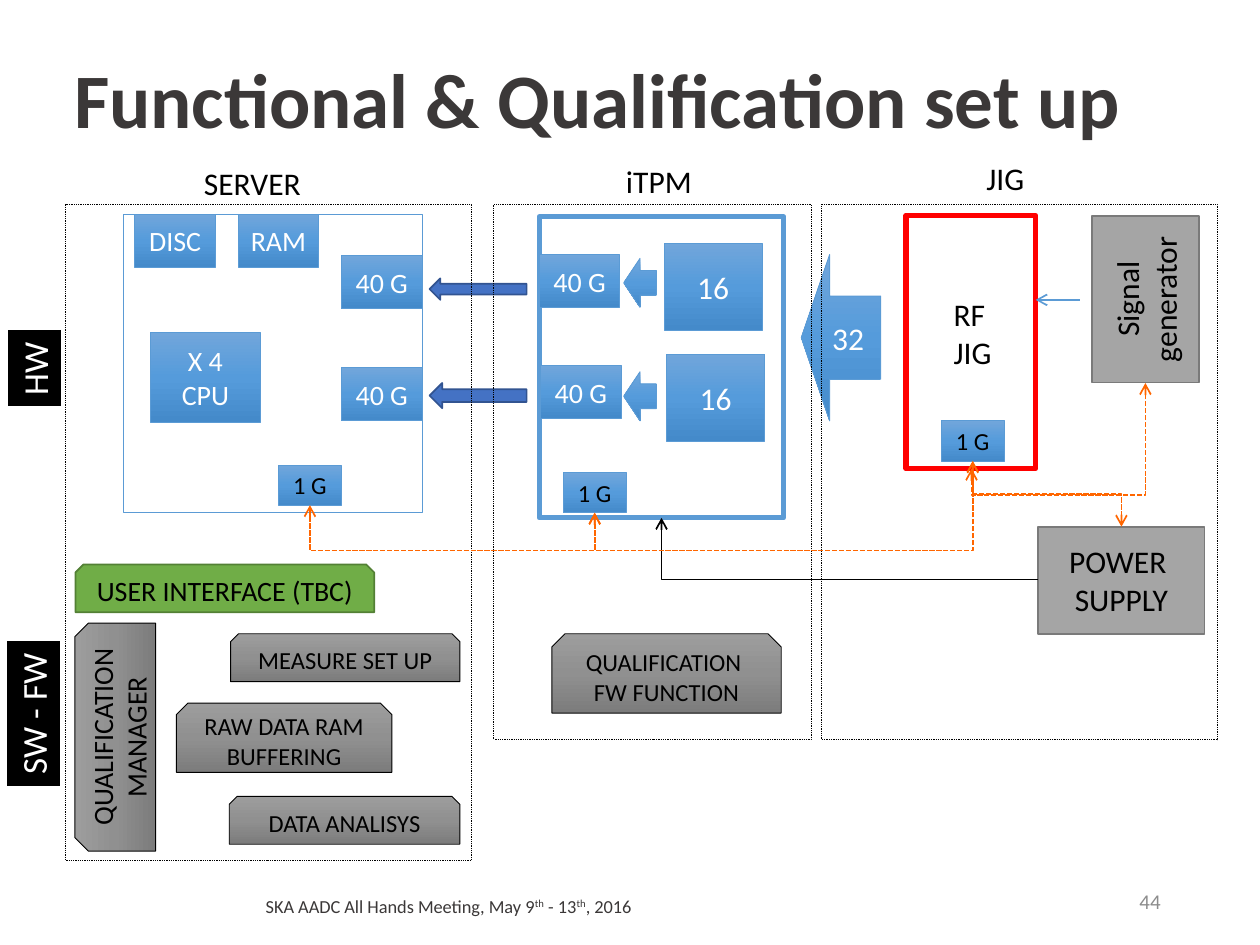
"""Build the functional and qualification set-up block diagram slide."""
from copy import deepcopy

from pptx import Presentation
from pptx.dml.color import RGBColor
from pptx.enum.dml import MSO_LINE
from pptx.enum.shapes import MSO_CONNECTOR as CONN, MSO_SHAPE as SHAPE
from pptx.enum.text import MSO_ANCHOR as ANCHOR, MSO_AUTO_SIZE as AUTO, PP_ALIGN as ALIGN
from pptx.oxml.ns import qn
from pptx.util import Inches, Pt

BLACK, WHITE, BLUE, ORANGE, DARK = "000000", "FFFFFF", "5B9BD5", "FF6600", "3B3838"
BLUES = ("71A6DB", "559BDB", "448ACA")
GRAYS = ("9D9D9D", "909090", "7C7C7C")
BLOCK = (0.64, 0.42)
PORT = (0.5, 0.32)
CHIP = (0.78, 0.69)

FOOTER = [("SKA AADC All Hands Meeting, May 9", 0), ("th", 30000), (" - 13", 0),
          ("th", 30000), (", 2016", 0)]
LABELS = [
    (1.52, 1.25, 0.99, 0.4, ["SERVER"]),
    (4.87, 1.24, 0.73, 0.4, ["iTPM"]),
    (7.73, 1.21, 0.51, 0.4, ["JIG"]),
    (7.47, 2.29, 0.51, 0.71, ["RF", "JIG"]),
]
FRAMES = [
    (4.28, 1.72, 1.94, 2.39, None, BLUE, 3),
    (7.19, 1.71, 1.03, 2.01, None, "FF0000", 3),
    (0.98, 1.7, 2.37, 2.37, WHITE, BLUE, 0.5),
]
ZONES = [(0.52, 3.22, 5.21), (3.92, 2.52, 4.25), (6.52, 3.14, 4.25)]
BLOCKS = [
    (5.27, 1.93, CHIP, ["16"], 18, WHITE),
    (4.28, 2.02, BLOCK, ["40 G"], 16, WHITE),
    (5.29, 2.81, CHIP, ["16"], 18, WHITE),
    (4.29, 2.9, BLOCK, ["40 G"], 16, WHITE),
    (2.71, 2.03, BLOCK, ["40 G"], 16, WHITE),
    (2.71, 2.92, BLOCK, ["40 G"], 16, WHITE),
    (2.21, 3.69, PORT, ["1 G"], 14, BLACK),
    (4.47, 3.75, PORT, ["1 G"], 14, BLACK),
    (7.47, 3.34, PORT, ["1 G"], 14, BLACK),
    (1.89, 1.7, BLOCK, ["RAM"], 16, WHITE),
    (1.19, 2.64, (0.88, 0.71), ["X 4", "CPU"], 16, WHITE),
    (1.07, 1.7, BLOCK, ["DISC"], 16, WHITE),
]
ARROWS = [
    (4.95, 2.05, 0.26, 0.39, BLUES, BLUE, 0.5),
    (4.95, 2.95, 0.26, 0.39, BLUES, BLUE, 0.5),
    (3.41, 2.21, 0.77, 0.17, "4472C4", "325491", 1),
    (3.41, 3.04, 0.77, 0.2, "4472C4", "325491", 1),
]
DEVICES = [
    (8.43, 1.95, ["Signal", "generator"], 270),
    (8.24, 4.18, ["POWER ", "SUPPLY"], 0),
]
MODULES = [
    (1.83, 5.03, 1.82, 0.38, ["MEASURE SET UP"], 14, 0),
    (1.4, 5.58, 1.71, 0.55, ["RAW DATA RAM BUFFERING"], 14, 0),
    (1.82, 6.32, 1.83, 0.38, ["DATA ANALISYS"], 14, 0),
    (0.01, 5.53, 1.81, 0.64, ["QUALIFICATION MANAGER"], 16, 270),
    (4.38, 5.03, 1.82, 0.63, ["QUALIFICATION ", "FW FUNCTION"], 14, 0),
]
CONTROL_LINKS = [
    (2.46, 4.01, 4.72, 4.07, 4.37),
    (4.72, 4.07, 7.72, 3.66, 4.37),
    (7.71, 3.72, 9.09, 3.04, 3.93),
    (7.72, 3.66, 8.9, 4.18, 3.92),
]
SIDE_TAGS = [(-0.04, 2.7, 0.63, "HW"), (-0.32, 5.44, 1.17, "SW - FW")]


def rgb(value):
    return RGBColor.from_string(value)


def add_run(p, text, size, color, bold=False):
    r = p.add_run()
    r.text = text
    r.font.name, r.font.size, r.font.bold = "Calibri", Pt(size), bold
    r.font.color.rgb = rgb(color)
    return r


def write(sp, lines, size, color, align=ALIGN.CENTER, anchor=ANCHOR.MIDDLE, wrap=True, bold=False):
    tf = sp.text_frame
    tf.word_wrap, tf.vertical_anchor = wrap, anchor
    if not wrap:
        tf.auto_size = AUTO.SHAPE_TO_FIT_TEXT
    for i, line in enumerate(lines):
        p = tf.paragraphs[0] if i == 0 else tf.add_paragraph()
        p.alignment = align
        add_run(p, line, size, color, bold)
    return tf


def textbox(s, x, y, w, h):
    return s.shapes.add_textbox(Inches(x), Inches(y), Inches(w), Inches(h))


def shape(s, kind, x, y, w, h, fill, line, width, rot=0):
    sp = s.shapes.add_shape(kind, Inches(x), Inches(y), Inches(w), Inches(h))
    sp.shadow.inherit = False
    sp.rotation = rot
    if fill is None:
        sp.fill.background()
    elif isinstance(fill, tuple):
        sp.fill.gradient()
        sp.fill.gradient_angle = 270
        stops = sp._element.spPr.find(".//" + qn("a:gsLst"))
        stops.insert(1, deepcopy(stops[0]))
        for stop, color, position in zip(sp.fill.gradient_stops, fill, (0, 0.5, 1)):
            stop.color.rgb, stop.position = rgb(color), position
    else:
        sp.fill.solid()
        sp.fill.fore_color.rgb = rgb(fill)
    sp.line.color.rgb, sp.line.width = rgb(line), Pt(width)
    return sp


def link(s, kind, x1, y1, x2, y2, color, ends=("tailEnd",), dash=None):
    cx = s.shapes.add_connector(kind, Inches(x1), Inches(y1), Inches(x2), Inches(y2))
    cx.line.color.rgb, cx.line.width = rgb(color), Pt(1)
    if dash:
        cx.line.dash_style = dash
    ln = cx.line._get_or_add_ln()
    for end in ends:
        ln.append(ln.makeelement(qn("a:" + end), {"type": "arrow"}))
    pr = cx._element.spPr
    pr.append(pr.makeelement(qn("a:effectLst"), {}))
    return cx


def control_link(s, x1, y1, x2, y2, turn):
    cx = link(s, CONN.ELBOW, x1, y1, x2, y2, ORANGE, ("headEnd", "tailEnd"), MSO_LINE.SQUARE_DOT)
    w, h = abs(y2 - y1), abs(x2 - x1)
    cx.left, cx.top = Inches((x1 + x2 - w) / 2), Inches((y1 + y2 - h) / 2)
    cx.width, cx.height = Inches(w), Inches(h)
    down = y2 > y1
    xfrm = cx._element.spPr.find(qn("a:xfrm"))
    xfrm.set("rot", str((270 if down else 90) * 60000))
    xfrm.set("flipH", "1")
    xfrm.set("flipV", "0" if down else "1")
    guides = cx._element.spPr.find(".//" + qn("a:avLst"))
    ratio = round((turn - y1) / (y2 - y1) * 100000)
    guides.append(guides.makeelement(qn("a:gd"), {"name": "adj1", "fmla": f"val {ratio}"}))


def power_link(s):
    cx = link(s, CONN.ELBOW, 5.25, 4.11, 8.24, 4.6, BLACK)
    pr = cx._element.spPr
    pr.find(qn("a:xfrm")).set("rot", str(180 * 60000))
    pr.find(qn("a:prstGeom")).set("prst", "bentConnector2")


def main():
    prs = Presentation()
    prs.slide_width, prs.slide_height = Inches(10), Inches(7.5)
    s = prs.slides.add_slide(prs.slide_layouts[6])

    tf = write(textbox(s, 1.6, 6.99, 3.92, 0.4), [], 10.5, DARK)
    p = tf.paragraphs[0]
    p.alignment = ALIGN.CENTER
    for text, baseline in FOOTER:
        r = add_run(p, text, 10.5, DARK)
        if baseline:
            r.font._element.set("baseline", str(baseline))
    tf = write(textbox(s, 0.49, 0.2, 9, 1.25), ["Functional & Qualification set up"], 44, DARK,
               ALIGN.LEFT, bold=True)
    tf.paragraphs[0].line_spacing = 0.9
    write(textbox(s, 7.06, 6.95, 2.25, 0.4), ["44"], 12, "8C8C8C", ALIGN.RIGHT)

    for frame in FRAMES:
        shape(s, SHAPE.RECTANGLE, *frame)
    sp = shape(s, SHAPE.LEFT_ARROW, 6.36, 2.02, 0.63, 1.32, BLUES, BLUE, 0.5)
    sp.adjustments[1] = 0.357
    write(sp, ["32"], 18, WHITE)
    for x, y, size, lines, points, color in BLOCKS:
        write(shape(s, SHAPE.RECTANGLE, x, y, *size, BLUES, BLUE, 0.5), lines, points, color)
    for arrow in ARROWS:
        shape(s, SHAPE.LEFT_ARROW, *arrow)
    write(shape(s, SHAPE.SNIP_2_SAME_RECTANGLE, 0.6, 4.48, 2.37, 0.38, "70AD47", "538035", 1),
          ["USER INTERFACE (TBC)"], 16, BLACK)
    for x, y, w, h, lines, points, rot in MODULES:
        sp = shape(s, SHAPE.SNIP_2_SAME_RECTANGLE, x, y, w, h, GRAYS, BLACK, 0.5, rot)
        write(sp, lines, points, BLACK)
    for x, w, h in ZONES:
        sp = shape(s, SHAPE.RECTANGLE, x, 1.62, w, h, None, BLACK, 0.5)
        sp.line.dash_style = MSO_LINE.ROUND_DOT
    for x, y, w, h, lines in LABELS:
        write(textbox(s, x, y, w, h), lines, 18, BLACK, ALIGN.LEFT, ANCHOR.TOP, False)
    for x, y, lines, rot in DEVICES:
        sp = shape(s, SHAPE.ROUND_2_SAME_RECTANGLE, x, y, 1.32, 0.85, "A5A5A5", "7A7A7A", 1, rot)
        sp.adjustments[0] = sp.adjustments[1] = 0
        write(sp, lines, 18, BLACK)

    link(s, CONN.STRAIGHT, 8.57, 2.38, 8.22, 2.38, BLUE)
    power_link(s)
    for ends in CONTROL_LINKS:
        control_link(s, *ends)
    for x, y, w, text in SIDE_TAGS:
        sp = shape(s, SHAPE.RECTANGLE, x, y, w, 0.44, BLACK, WHITE, 1.5, 270)
        write(sp, [text], 20, WHITE, ALIGN.LEFT, ANCHOR.TOP, False)
    prs.save("out.pptx")


if __name__ == "__main__":
    main()
